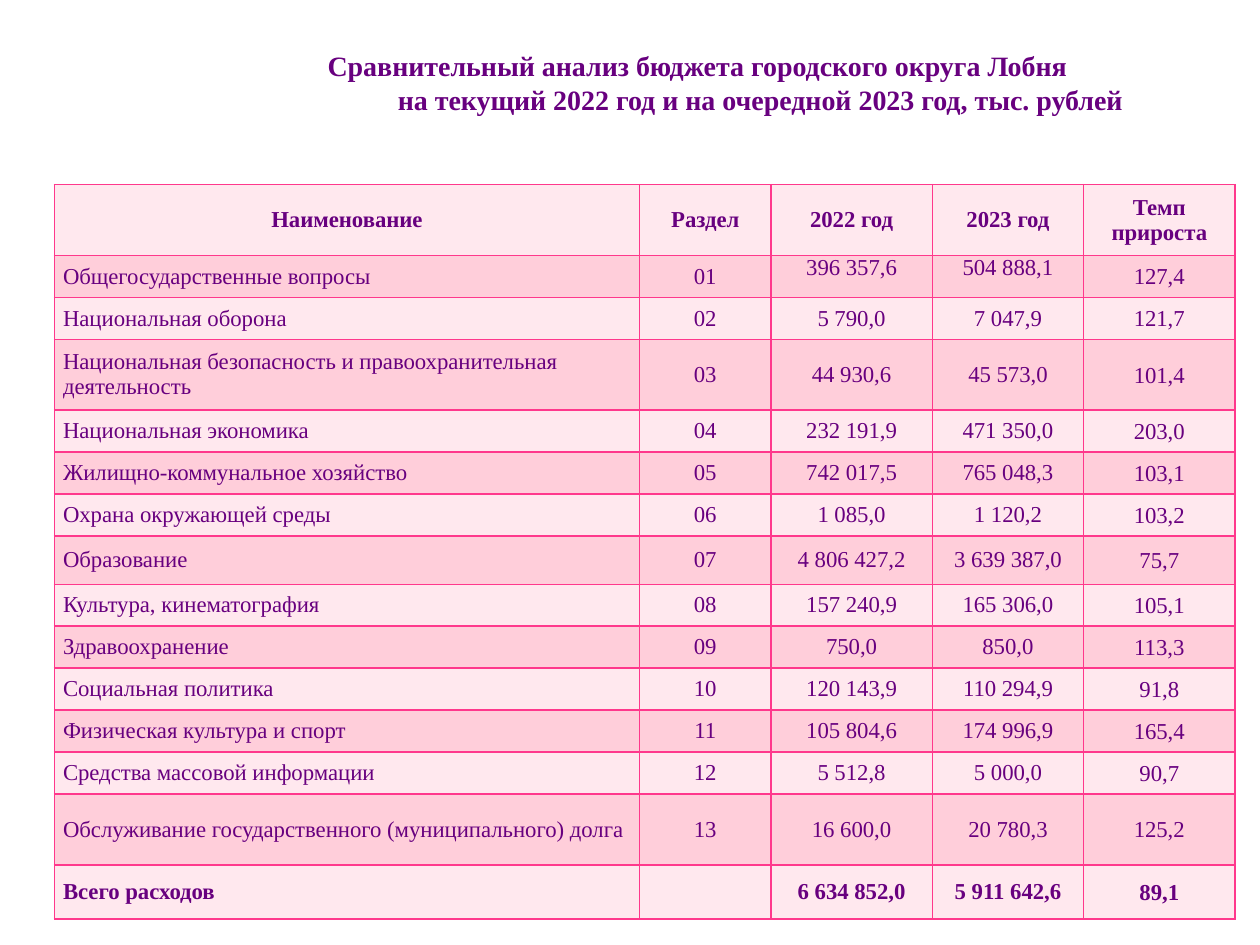
from lxml import etree
from pptx import Presentation
from pptx.dml.color import RGBColor
from pptx.enum.text import MSO_ANCHOR, PP_ALIGN
from pptx.oxml.ns import qn
from pptx.util import Pt

CENTER, LEFT = PP_ALIGN.CENTER, PP_ALIGN.LEFT
TOP, MIDDLE = MSO_ANCHOR.TOP, MSO_ANCHOR.MIDDLE
FONT = "Times New Roman"
COLORS = {"text": "68007F", "border": "FF388C", "light": "FFE8EE", "dark": "FFCEDA"}

TITLE = ["Сравнительный анализ бюджета городского округа Лобня",
         "на текущий 2022 год и на очередной 2023 год, тыс. рублей"]
HEADER = ["Наименование", "Раздел", "2022 год", "2023 год", "Темп прироста"]
EXPENSES = [
    ("Общегосударственные вопросы", "396 357,6", "504 888,1", "127,4"),
    ("Национальная оборона", "5 790,0", "7 047,9", "121,7"),
    ("Национальная безопасность и правоохранительная деятельность",
     "44 930,6", "45 573,0", "101,4"),
    ("Национальная экономика", "232 191,9", "471 350,0", "203,0"),
    ("Жилищно-коммунальное хозяйство", "742 017,5", "765 048,3", "103,1"),
    ("Охрана окружающей среды", "1 085,0", "1 120,2", "103,2"),
    ("Образование", "4 806 427,2", "3 639 387,0", "75,7"),
    ("Культура, кинематография", "157 240,9", "165 306,0", "105,1"),
    ("Здравоохранение", "750,0", "850,0", "113,3"),
    ("Социальная политика", "120 143,9", "110 294,9", "91,8"),
    ("Физическая культура и спорт", "105 804,6", "174 996,9", "165,4"),
    ("Средства массовой информации", "5 512,8", "5 000,0", "90,7"),
    ("Обслуживание государственного (муниципального) долга",
     "16 600,0", "20 780,3", "125,2"),
]
TOTAL = ["Всего расходов", "", "6 634 852,0", "5 911 642,6", "89,1"]

COL_WIDTHS = [334.5, 75, 92.25, 86.5, 86.5]
ROW_HEIGHT = 24
TALL_ROWS = {0: 40.5, 3: 40.5, 7: 27.5, 13: 40.5, 14: 31}


def format_paragraph(p, size, bold, align):
    p.alignment = align
    p.font.name = FONT
    p.font.size = Pt(size)
    p.font.bold = bold
    p.font.color.rgb = RGBColor.from_string(COLORS["text"])


def add_borders(cell):
    tcPr = cell._tc.get_or_add_tcPr()
    for side in ("lnL", "lnR", "lnT", "lnB"):
        ln = etree.SubElement(tcPr, qn(f"a:{side}"), w=str(Pt(1)))
        fill = etree.SubElement(ln, qn("a:solidFill"))
        etree.SubElement(fill, qn("a:srgbClr"), val=COLORS["border"])


prs = Presentation()
prs.slide_width, prs.slide_height = Pt(720), Pt(540)
slide = prs.slides.add_slide(prs.slide_layouts[5])

title = slide.shapes.title
title.left, title.top, title.width, title.height = Pt(76.3), Pt(15), Pt(680.4), Pt(64)
tf = title.text_frame
tf.vertical_anchor = MIDDLE
tf.margin_right = Pt(43.2)
tf.text = "\n".join(TITLE)
for p in tf.paragraphs:
    format_paragraph(p, 16, True, CENTER)
# The second line is stepped to the right of the first
tf.paragraphs[1]._p.get_or_add_pPr().set("marL", str(Pt(72)))

rows = [HEADER]
for number, (name, *values) in enumerate(EXPENSES, 1):
    rows.append([name, f"{number:02}", *values])
rows.append(TOTAL)

heights = [TALL_ROWS.get(i, ROW_HEIGHT) for i in range(len(rows))]
table = slide.shapes.add_table(len(rows), len(HEADER), Pt(31), Pt(105.5),
                               Pt(sum(COL_WIDTHS)), Pt(sum(heights))).table
for column, width in zip(table.columns, COL_WIDTHS):
    column.width = Pt(width)

for i, row in enumerate(rows):
    table.rows[i].height = Pt(heights[i])
    is_header = i == 0
    bold = is_header or i == len(rows) - 1
    for j, text in enumerate(row):
        cell = table.cell(i, j)
        is_amount = j in (2, 3) and not is_header
        is_rate = j == 4 and not is_header
        side, top, bottom = 5, 3.6, 3.6
        if is_amount:
            top = bottom = 0
        elif is_rate:
            side, top, bottom = 0.7, 0.7, 0
        cell.margin_left = cell.margin_right = Pt(side)
        cell.margin_top, cell.margin_bottom = Pt(top), Pt(bottom)
        cell.vertical_anchor = TOP if is_amount and i == 1 else MIDDLE
        add_borders(cell)
        cell.fill.solid()
        cell.fill.fore_color.rgb = RGBColor.from_string(COLORS["dark" if i % 2 else "light"])
        cell.text = text
        align = LEFT if j == 0 and not is_header else CENTER
        format_paragraph(cell.text_frame.paragraphs[0], 13, bold, align)

prs.save("out.pptx")
